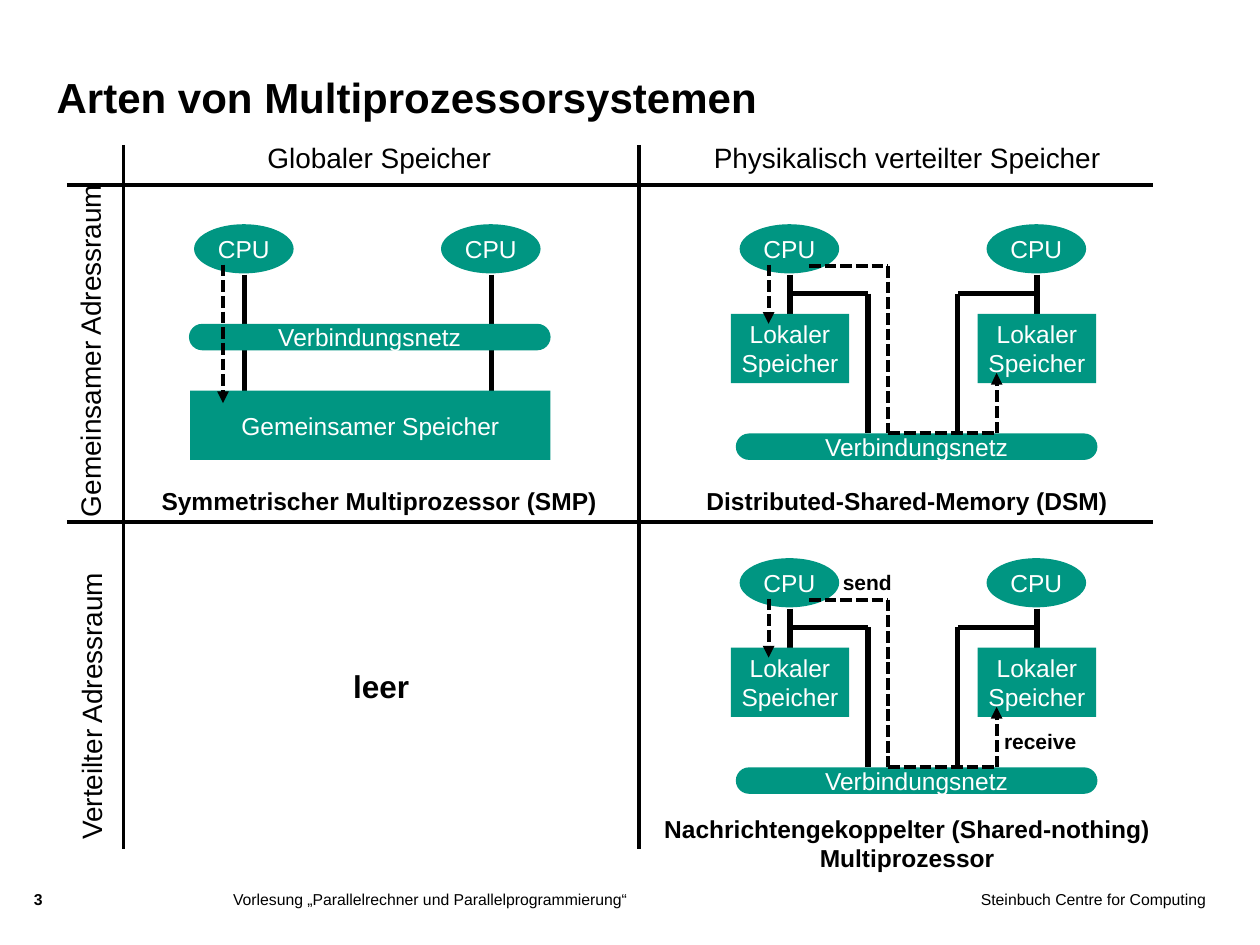
from collections import namedtuple

from lxml import etree
from pptx import Presentation
from pptx.dml.color import RGBColor
from pptx.enum.dml import MSO_LINE
from pptx.enum.shapes import MSO_CONNECTOR, MSO_SHAPE
from pptx.enum.text import MSO_ANCHOR, PP_ALIGN
from pptx.oxml.ns import qn
from pptx.util import Inches, Pt

COLORS = {"ink": "000000", "teal": "009682", "white": "FFFFFF"}
FONT = "Arial"
LEFT, CENTER, RIGHT = PP_ALIGN.LEFT, PP_ALIGN.CENTER, PP_ALIGN.RIGHT
TOP, MIDDLE, BOTTOM = MSO_ANCHOR.TOP, MSO_ANCHOR.MIDDLE, MSO_ANCHOR.BOTTOM
ELLIPSE, RECT, PILL = MSO_SHAPE.OVAL, MSO_SHAPE.RECTANGLE, MSO_SHAPE.ROUNDED_RECTANGLE
STRAIGHT, DASH = MSO_CONNECTOR.STRAIGHT, MSO_LINE.SQUARE_DOT

Box = namedtuple("Box", "left top width height")

prs = Presentation()
prs.slide_width, prs.slide_height = Inches(10), Inches(7.5)
COL, ROW = prs.slide_width / 100, prs.slide_height / 75
slide = prs.slides.add_slide(prs.slide_layouts[6])


def inside(box, left, top, width, height):
    return Box(box.left + left, box.top + top, width, height)


def emu(box):
    return [round(n * unit) for n, unit in zip(box, (COL, ROW, COL, ROW))]


def write(frame, text, size=14, color="ink", bold=False, align=CENTER,
          anchor=TOP, wrap=True, padded=False):
    frame.word_wrap = wrap
    frame.vertical_anchor = anchor
    if not padded:
        frame.margin_left = frame.margin_right = 0
        frame.margin_top = frame.margin_bottom = 0
    paragraph = frame.paragraphs[0]
    paragraph.text = text
    paragraph.alignment = align
    for run in paragraph.runs:
        run.font.name = FONT
        run.font.size = Pt(size)
        run.font.bold = bold
        run.font.color.rgb = RGBColor.from_string(COLORS[color])


def label(box, text, rotation=0, **style):
    words = slide.shapes.add_textbox(*emu(box))
    words.rotation = rotation
    write(words.text_frame, text, **style)


def part(kind, box, text):
    block = slide.shapes.add_shape(kind, *emu(box))
    block.shadow.inherit = False
    block.fill.solid()
    block.fill.fore_color.rgb = RGBColor.from_string(COLORS["teal"])
    block.line.fill.background()
    if kind == PILL:
        block.adjustments[0] = 0.5
    write(block.text_frame, text, color="white", anchor=MIDDLE)


def path_line(box, points, weight=3, dashed=False, arrow=False):
    last = len(points) - 2
    for i, ((x1, y1), (x2, y2)) in enumerate(zip(points, points[1:])):
        wire = slide.shapes.add_connector(
            STRAIGHT,
            round((box.left + x1) * COL), round((box.top + y1) * ROW),
            round((box.left + x2) * COL), round((box.top + y2) * ROW))
        wire.line.width = Pt(weight)
        wire.line.color.rgb = RGBColor.from_string(COLORS["ink"])
        if dashed:
            wire.line.dash_style = DASH
        if arrow and i == last:
            etree.SubElement(wire.line._ln, qn("a:tailEnd"), type="triangle")
        etree.SubElement(wire._element.spPr, qn("a:effectLst"))


def access(box, points):
    path_line(box, points, weight=2.25, dashed=True, arrow=True)


def frame_area(box):
    label(inside(box, 4.5, 3.6, 75.3, 6.1), "Arten von Multiprozessorsystemen",
          size=24, bold=True, align=LEFT, anchor=BOTTOM)
    footer = dict(size=9)
    label(inside(box, 2.7, 70.6, 3.6, 2.4), "3", bold=True, align=LEFT, **footer)
    label(inside(box, 18.5, 70.6, 45.7, 3.9),
          "Vorlesung „Parallelrechner und Parallelprogrammierung“", align=LEFT, **footer)
    label(inside(box, 65.8, 70.6, 29.9, 3.9), "Steinbuch Centre for Computing",
          align=RIGHT, **footer)


def matrix(box):
    middle, header, divider = 45.4, 3.2, 29.9
    for x in (4.5, middle):
        path_line(box, [(x, 0), (x, box.height)], weight=2.25)
    for y in (header, divider):
        path_line(box, [(0, y), (box.width, y)], weight=2.25)
    heading = dict(size=16, wrap=False, padded=True)
    label(inside(box, 14.8, -0.8, 20, 3.7), "Globaler Speicher", **heading)
    label(inside(box, 50.2, -0.8, 33, 3.7), "Physikalisch verteilter Speicher", **heading)
    label(inside(box, -12.5, 14.5, 28.7, 3.7), "Gemeinsamer Adressraum",
          rotation=270, **heading)
    label(inside(box, -9.8, 42.7, 23.5, 3.7), "Verteilter Adressraum",
          rotation=270, **heading)
    label(inside(box, 4.5, divider, middle - 4.5, box.height - divider), "leer",
          size=18, bold=True, anchor=MIDDLE, padded=True)


def caption(box, text):
    label(box, text, bold=True, wrap=False, padded=True)


def shared_memory(box):
    for x in (0.4, 20):
        path_line(box, [(x + 4, 4), (x + 4, 13.2)])
        part(ELLIPSE, inside(box, x, 0, 7.9, 3.9), "CPU")
    part(RECT, inside(box, 0.1, 13.2, 28.6, 5.5), "Gemeinsamer Speicher")
    part(PILL, inside(box, 0, 7.9, 28.7, 2.1), "Verbindungsnetz")
    access(box, [(2.7, 3.2), (2.7, 14.2)])
    caption(inside(box, -3.3, 20.3, 36.8, 3.4), "Symmetrischer Multiprozessor (SMP)")


def distributed_memory(box):
    part(PILL, inside(box, 0.4, 16.6, 28.7, 2.1), "Verbindungsnetz")
    for x, bus in ((0, 10.9), (19.6, 18)):
        stem = x + 4.7
        path_line(box, [(stem, 4), (stem, 7.1)])
        path_line(box, [(stem, 5.5), (bus, 5.5), (bus, 16.6)])
        part(RECT, inside(box, x, 7.1, 9.4, 5.5), "Lokaler Speicher")
        part(ELLIPSE, inside(box, x + 0.7, 0, 7.9, 3.9), "CPU")
    access(box, [(6.2, 3.3), (12.5, 3.3), (12.5, 16.6), (21.1, 16.6), (21.1, 11.8)])
    access(box, [(3, 3.2), (3, 7.9)])


def message_passing(box):
    distributed_memory(box)
    note = dict(size=12, bold=True, align=LEFT, wrap=False, padded=True)
    label(inside(box, 7.9, 0.4, 5.9, 3), "send", **note)
    label(inside(box, 20.7, 13, 7.8, 3), "receive", **note)
    caption(inside(box, -6.3, 19.8, 40.6, 5.7),
            "Nachrichtengekoppelter (Shared-nothing)\vMultiprozessor")


def shared_address_space(box):
    distributed_memory(box)
    caption(inside(box, -3, 20.3, 34, 3.4), "Distributed-Shared-Memory (DSM)")


frame_area(Box(0, 0, 100, 75))
matrix(Box(5.3, 11.5, 86.2, 55.9))
shared_memory(Box(15, 17.8, 28.7, 18.7))
shared_address_space(Box(58, 17.8, 29.1, 18.7))
message_passing(Box(58, 44.3, 29.1, 18.7))
prs.save("out.pptx")
